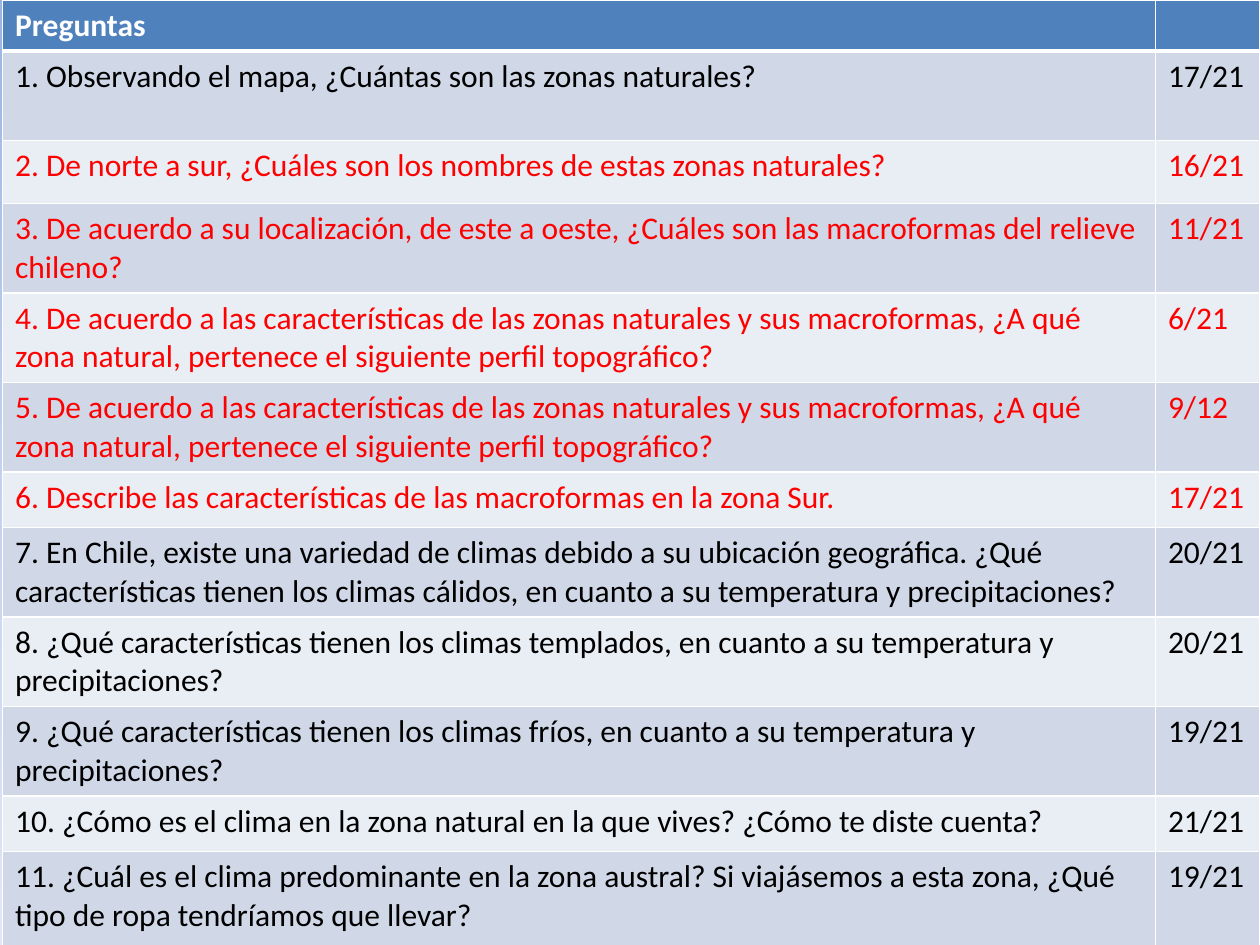
from copy import deepcopy
from pptx import Presentation
from pptx.dml.color import RGBColor
from pptx.oxml import parse_xml
from pptx.oxml.ns import nsdecls, qn
from pptx.util import Inches, Pt

# Content: question, score, text colour, row height
HEAD = ("Preguntas", "", "white", 0.38)
ROWS = [
    ("1. Observando el mapa, ¿Cuántas son las zonas naturales?", "17/21", "black", 0.71),
    ("2. De norte a sur, ¿Cuáles son los nombres de estas zonas naturales?", "16/21", "red", 0.5),
    ("3. De acuerdo a su localización, de este a oeste, ¿Cuáles son las macroformas "
     "del relieve chileno?", "11/21", "red", 0.67),
    ("4. De acuerdo a las características de las zonas naturales y sus macroformas, "
     "¿A qué zona natural, pertenece el siguiente perfil topográfico?", "6/21", "red", 0.67),
    ("5. De acuerdo a las características de las zonas naturales y sus macroformas, "
     "¿A qué zona natural, pertenece el siguiente perfil topográfico?", "9/12", "red", 0.67),
    ("6. Describe las características de las macroformas en la zona Sur.", "17/21", "red", 0.44),
    ("7. En Chile, existe una variedad de climas debido a su ubicación geográfica. "
     "¿Qué características tienen los climas cálidos, en cuanto a su temperatura y "
     "precipitaciones?", "20/21", "black", 0.67),
    ("8. ¿Qué características tienen los climas templados, en cuanto a su temperatura y "
     "precipitaciones?", "20/21", "black", 0.67),
    ("9. ¿Qué características tienen los climas fríos, en cuanto a su temperatura y "
     "precipitaciones?", "19/21", "black", 0.67),
    ("10. ¿Cómo es el clima en la zona natural en la que vives? ¿Cómo te diste cuenta?",
     "21/21", "black", 0.44),
    ("11. ¿Cuál es el clima predominante en la zona austral? Si viajásemos a esta zona, "
     "¿Qué tipo de ropa tendríamos que llevar?", "19/21", "black", 0.83),
]
COLS = [9.15, 0.83]
COLORS = {"white": "FFFFFF", "black": "000000", "red": "FF0000",
          "head": "4F81BD", "odd": "D0D8E8", "even": "E9EDF4",
          "top": "9AB5E4", "mid": "C2D1ED", "low": "E1E8F5"}
FONT, SIZE = "Calibri", 18


def rgb(name):
    return RGBColor.from_string(COLORS[name])


def shade(slide):
    fill = slide.background.fill
    fill.gradient()
    fill.gradient_angle = 270
    stops = slide.element.find(".//" + qn("a:gsLst"))
    stops.insert(1, deepcopy(stops[0]))
    for stop, pos, name in zip(fill.gradient_stops, (0, 0.5, 1), ("top", "mid", "low")):
        stop.position = pos
        stop.color.rgb = rgb(name)


def edge(cell, base):
    props = cell._tc.get_or_add_tcPr()
    widths = {"lnL": 1, "lnR": 1, "lnT": 1, "lnB": base}
    for spot, (tag, width) in enumerate(widths.items()):
        props.insert(spot, parse_xml(
            f'<a:{tag} {nsdecls("a")} w="{Pt(width)}"><a:solidFill>'
            f'<a:srgbClr val="{COLORS["white"]}"/></a:solidFill></a:{tag}>'))


def write(cell, text, color, bold):
    para = cell.text_frame.paragraphs[0]
    para.font.size = Pt(SIZE)
    if text:
        run = para.add_run()
        run.text = text
        font = run.font
        font.name, font.size, font.bold = FONT, Pt(SIZE), bold
        font.color.rgb = rgb(color)


def main():
    deck = Presentation()
    deck.slide_width, deck.slide_height = Inches(10), Inches(7.5)
    slide = deck.slides.add_slide(deck.slide_layouts[6])
    shade(slide)

    # Table of questions and scores
    rows = [HEAD] + ROWS
    high = sum(row[-1] for row in rows)
    table = slide.shapes.add_table(len(rows), len(COLS), Inches(0.02), 0,
                                   Inches(sum(COLS)), Inches(high)).table
    for col, width in zip(table.columns, COLS):
        col.width = Inches(width)

    # Cells, banded below the head row
    for i, (ask, score, color, height) in enumerate(rows):
        table.rows[i].height = Inches(height)
        band = "head" if i == 0 else "odd" if i % 2 else "even"
        for j, text in enumerate((ask, score)):
            cell = table.cell(i, j)
            cell.fill.solid()
            cell.fill.fore_color.rgb = rgb(band)
            edge(cell, 3 if i == 0 else 1)
            write(cell, text, color, i == 0)

    deck.save("out.pptx")


if __name__ == "__main__":
    main()
